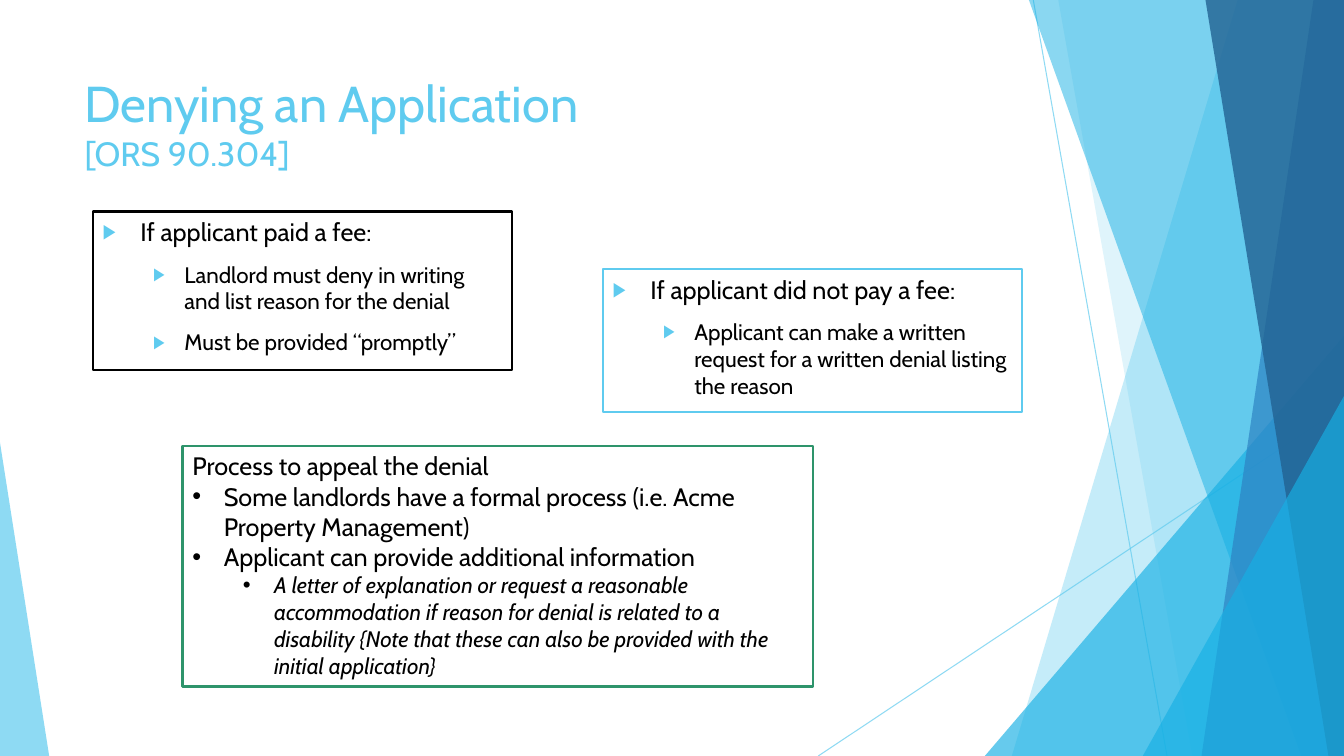
from lxml import etree
from pptx import Presentation
from pptx.dml.color import RGBColor
from pptx.enum.shapes import MSO_CONNECTOR as Link, MSO_SHAPE as Form
from pptx.enum.text import MSO_ANCHOR as Anchor, MSO_AUTO_SIZE as Fit, PP_ALIGN as Align
from pptx.oxml.ns import qn
from pptx.util import Cm, Pt

FONT = "Cabin"
WIDE, HIGH = 33.87, 19.05
BLACK = RGBColor(0x00, 0x00, 0x00)
WHITE = RGBColor(0xFF, 0xFF, 0xFF)
SKY = RGBColor(0x5F, 0xCB, 0xEF)
CYAN = RGBColor(0x17, 0xB0, 0xE4)
BLUE = RGBColor(0x2E, 0x83, 0xC3)
NAVY = RGBColor(0x22, 0x62, 0x92)
GREEN = RGBColor(0x2E, 0x94, 0x6B)

# Each level: left margin and hanging indent in cm, bullet mark, text size
HEAD = (0, 0, "", 18)
ARROW = (0.95, 0.95, "▶", 18)
SUB_ARROW = (2.06, 0.79, "▶", 16)
DOT = (0.79, 0.79, "•", 18)
SUB_DOT = (2.06, 0.79, "•", 16)


def fade(fill, alpha):
    """Set the opacity of a solid fill in percent."""
    tint = fill._xPr.find(qn("a:solidFill"))[0]
    etree.SubElement(tint, qn("a:alpha"), val=str(alpha * 1000))


def paint(shape, color, alpha):
    shape.shadow.inherit = False
    shape.fill.solid()
    shape.fill.fore_color.rgb = color
    fade(shape.fill, alpha)
    shape.line.fill.background()


def draw_ray(slide, start, end):
    ray = slide.shapes.add_connector(Link.STRAIGHT, *map(Cm, start + end))
    ray.line.color.rgb = SKY
    ray.line.width = Pt(0.75)
    fade(ray.line.fill, 70)
    etree.SubElement(ray._element.spPr, qn("a:effectLst"))


def draw_facet(slide, box, top, foot, color, alpha):
    """Fill the box to its right edge, from a slanted side given by two x offsets."""
    x, y, w, h = box
    pen = slide.shapes.build_freeform(Cm(x + top), Cm(y))
    rest = [(x + w, y), (x + w, y + h), (x + foot, y + h)]
    pen.add_line_segments([(Cm(a), Cm(b)) for a, b in rest])
    paint(pen.convert_to_shape(), color, alpha)


def draw_wedge(slide, box, left, top, width, apex, color, alpha):
    """Stand a right triangle on the bottom edge of the box."""
    x, y, _, h = box
    wedge = slide.shapes.add_shape(
        Form.ISOSCELES_TRIANGLE, Cm(x + left), Cm(y + top), Cm(width), Cm(h - top))
    wedge.adjustments[0] = apex
    paint(wedge, color, alpha)


def draw_backdrop(slide, box):
    x, y, w, h = box
    draw_ray(slide, (x + 26.04, y), (x + 29.41, y + h))
    draw_ray(slide, (x + w, y + 10.24), (x + 20.62, y + h))
    draw_facet(slide, box, 31.19, 25.5, SKY, 36)
    draw_facet(slide, box, 26.67, 30.05, SKY, 20)
    draw_wedge(slide, box, 24.82, 8.46, 9.05, 1, CYAN, 66)
    draw_facet(slide, box, 25.93, 32.79, CYAN, 50)
    draw_facet(slide, box, 33.1, 30.28, BLUE, 70)
    draw_facet(slide, box, 30.38, 33.48, NAVY, 80)
    draw_wedge(slide, box, 28.8, 9.98, 5.07, 1, CYAN, 66)
    draw_wedge(slide, box, 0, 11.15, 1.24, 0, SKY, 70)


def add_run(para, text, size, color):
    run = para.add_run()
    run.text = text
    run.font.name = FONT
    run.font.size = Pt(size)
    run.font.color.rgb = color
    return run


def set_title(slide, box, text, cite):
    title = slide.shapes.title
    title.left, title.top, title.width, title.height = map(Cm, box)
    frame = title.text_frame
    frame.word_wrap = True
    frame.auto_size = Fit.NONE
    frame.vertical_anchor = Anchor.TOP
    para = frame.paragraphs[0]
    para.alignment = Align.LEFT
    add_run(para, text, 36, SKY)
    para.add_line_break()
    add_run(para, cite, 24, SKY)


def set_bullet(para, left, hang, mark):
    props = para._p.get_or_add_pPr()
    props.set("marL", str(Cm(left)))
    props.set("indent", str(-Cm(hang)))
    if mark == "▶":
        tint = etree.SubElement(props, qn("a:buClr"))
        etree.SubElement(tint, qn("a:srgbClr"), val=str(SKY))
        etree.SubElement(props, qn("a:buSzPct"), val="80000")
    etree.SubElement(props, qn("a:buFont"), typeface="Arial")
    etree.SubElement(props, qn("a:buChar"), char=mark)


def add_card(slide, box, edge, gap, items):
    """Draw a framed list; gap is the space before each paragraph in points."""
    card = slide.shapes.add_shape(Form.RECTANGLE, *map(Cm, box))
    card.shadow.inherit = False
    card.fill.solid()
    card.fill.fore_color.rgb = WHITE
    card.line.color.rgb = edge
    card.line.width = Pt(1.5)
    frame = card.text_frame
    frame.word_wrap = True
    frame.vertical_anchor = Anchor.TOP
    for i, (level, text) in enumerate(items):
        left, hang, mark, size = level
        para = frame.add_paragraph() if i else frame.paragraphs[0]
        para.alignment = Align.LEFT
        para.space_before = Pt(gap)
        para.level = int(level in (SUB_ARROW, SUB_DOT))
        if mark:
            set_bullet(para, left, hang, mark)
        run = add_run(para, text, size, BLACK)
        if level == SUB_DOT:
            run.font.italic = True


def main():
    deck = Presentation()
    deck.slide_width, deck.slide_height = Cm(WIDE), Cm(HIGH)
    slide = deck.slides.add_slide(deck.slide_layouts[5])
    draw_backdrop(slide, (0, 0, WIDE, HIGH))
    set_title(slide, (1.88, 1.7, 23.88, 3.66), "Denying an Application", "[ORS 90.304]")
    add_card(slide, (2.34, 5.33, 10.57, 3.99), BLACK, 10, [
        (ARROW, "If applicant paid a fee:"),
        (SUB_ARROW, "Landlord must deny in writing and list reason for the denial"),
        (SUB_ARROW, "Must be provided “promptly”"),
    ])
    add_card(slide, (15.19, 6.78, 10.57, 3.61), SKY, 10, [
        (ARROW, "If applicant did not pay a fee:"),
        (SUB_ARROW, "Applicant can make a written request for a written denial "
                    "listing the reason"),
    ])
    add_card(slide, (4.6, 11.23, 15.88, 6.07), GREEN, 0, [
        (HEAD, "Process to appeal the denial"),
        (DOT, "Some landlords have a formal process (i.e. Acme Property Management)"),
        (DOT, "Applicant can provide additional information"),
        (SUB_DOT, "A letter of explanation or request a reasonable accommodation if "
                  "reason for denial is related to a disability {Note that these can "
                  "also be provided with the initial application}"),
    ])
    deck.save("out.pptx")


if __name__ == "__main__":
    main()
